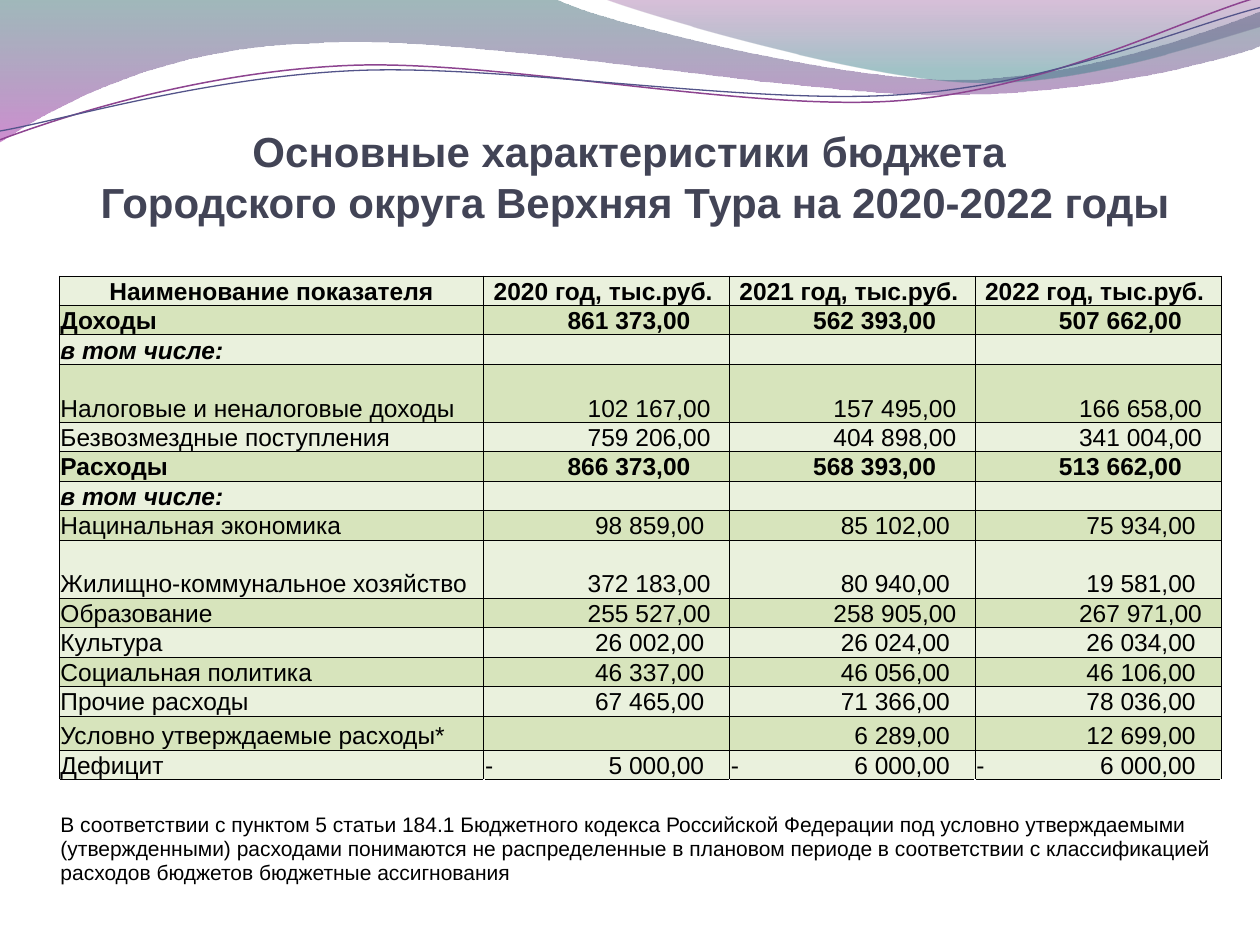
from lxml.etree import SubElement
from pptx import Presentation
from pptx.dml.color import RGBColor
from pptx.enum.text import MSO_ANCHOR, PP_ALIGN
from pptx.oxml.ns import qn
from pptx.util import Inches, Pt

COLORS = {
    "teal": "2D6368", "purple": "A530A9", "plum": "7F2F82", "sea": "2F7B82",
    "violet line": "8D4490", "indigo line": "53548A", "title": "424456",
    "text": "000000", "light row": "EAF1DD", "dark row": "D7E4BC",
}


def draw_wave(page, start, segments, closed):
    """Draw lines (one point) and Bezier curves (three points), in inches."""
    corners = [(Inches(x), Inches(y)) for segment in segments for x, y in segment]
    builder = page.shapes.build_freeform(Inches(start[0]), Inches(start[1]))
    builder.add_line_segments(corners, close=closed)
    wave = builder.convert_to_shape()
    wave.shadow.inherit = False
    # Join each three line steps of a curve into one Bezier step
    steps = iter(list(wave._element.spPr.iter(qn("a:lnTo"))))
    for segment in segments:
        group = [next(steps) for _ in segment]
        if len(group) == 3:
            curve = SubElement(group[0].getparent(), qn("a:cubicBezTo"))
            group[0].addprevious(curve)
            for step in group:
                curve.append(step[0])
                step.getparent().remove(step)
    return wave


def set_border(cell, sides):
    for side in sides:
        line = SubElement(cell._tc.get_or_add_tcPr(), qn("a:ln" + side), w=str(Pt(0.5)))
        fill = SubElement(line, qn("a:solidFill"))
        SubElement(fill, qn("a:srgbClr"), val=COLORS["text"])


deck = Presentation()
deck.slide_width, deck.slide_height = Inches(10), Inches(7.5)
page = deck.slides.add_slide(deck.slide_layouts[6])

# Translucent gradient waves: start, segments, (position, colour, opacity %)
bands = [
    ((0, 0), [
        [(4.4, -0.01)],
        [(4.76, 0.17), (6.64, 0.63), (7.58, 0.63)],
        [(8.53, 0.63), (9.58, 0.26), (10, 0.09)],
        [(10.01, 0.36)],
        [(9.83, 0.44), (8.7, 0.76), (7.46, 0.75)],
        [(6.22, 0.75), (3.82, 0.28), (2.57, 0.34)],
        [(1.29, 0.36), (0.46, 0.83), (-0.01, 1.13)],
        [(0, 0)],
    ], [(0, "teal", 45), (1, "purple", 55)]),
    ((4.79, -0.01), [
        [(5.09, 0.11), (6.82, 0.62), (7.69, 0.65)],
        [(8.56, 0.69), (9.61, 0.32), (10, 0.21)],
        [(10, 0)],
        [(4.79, -0.01)],
    ], [(0, "plum", 30), (0.8, "sea", 45)]),
]
for start, segments, stops in bands:
    band = draw_wave(page, start, segments, True)
    band.line.fill.background()
    band.fill.gradient()
    band.fill.gradient_angle = 270
    for stop, (position, color, _) in zip(band.fill.gradient_stops, stops):
        stop.position = position
        stop.color.rgb = RGBColor.from_string(COLORS[color])
    for element, (_, _, opacity) in zip(band._element.spPr.iter(qn("a:srgbClr")), stops):
        SubElement(element, qn("a:alpha"), val=str(opacity * 1000))

# Thin wavy lines
strands = [
    ("violet line", 0.85, (0, 1.11), [
        [(0.48, 0.93), (1.58, 0.57), (2.77, 0.52)],
        [(3.95, 0.47), (5.93, 0.89), (7.13, 0.8)],
        [(8.33, 0.71), (9.38, 0.15), (9.98, -0.02)]]),
    ("indigo line", 0.75, (0, 1.04), [
        [(0.47, 0.96), (1.64, 0.61), (2.83, 0.56)],
        [(4.03, 0.51), (5.97, 0.84), (7.17, 0.75)],
        [(8.36, 0.67), (9.41, 0.21), (10, 0.06)]]),
]
for color, width, start, segments in strands:
    strand = draw_wave(page, start, segments, False)
    strand.fill.background()
    strand.line.color.rgb = RGBColor.from_string(COLORS[color])
    strand.line.width = Pt(width)

# Title
title = page.shapes.add_textbox(Inches(0.5), Inches(0.86), Inches(9.08), Inches(0.94))
frame = title.text_frame
frame.word_wrap = True
frame.vertical_anchor = MSO_ANCHOR.BOTTOM
frame.margin_left = frame.margin_right = frame.margin_bottom = 0
para = frame.paragraphs[0]
para.text = "Основные характеристики бюджета \vГородского округа Верхняя Тура на 2020-2022 годы"
para.alignment = PP_ALIGN.CENTER
para.font.name, para.font.size, para.font.bold = "Arial", Pt(24), True
para.font.color.rgb = RGBColor.from_string(COLORS["title"])

# Budget table: name, values by year
years = [f"{year} год, тыс.руб. " for year in (2020, 2021, 2022)]
budget = [
    ("Наименование показателя", years),
    ("Доходы", [861373, 562393, 507662]),
    ("в том числе:", [None] * 3),
    ("Налоговые и неналоговые доходы", [102167, 157495, 166658]),
    ("Безвозмездные поступления", [759206, 404898, 341004]),
    ("Расходы", [866373, 568393, 513662]),
    ("в том числе:", [None] * 3),
    ("Нацинальная экономика", [98859, 85102, 75934]),
    ("Жилищно-коммунальное хозяйство", [372183, 80940, 19581]),
    ("Образование", [255527, 258905, 267971]),
    ("Культура", [26002, 26024, 26034]),
    ("Социальная политика", [46337, 46056, 46106]),
    ("Прочие расходы", [67465, 71366, 78036]),
    ("Условно утверждаемые расходы*", [None, 6289, 12699]),
    ("Дефицит", [-5000, -6000, -6000]),
]
footnote = (
    "В соответствии с пунктом 5 статьи 184.1 Бюджетного кодекса Российской Федерации "
    "под условно утверждаемыми (утвержденными) расходами понимаются не распределенные "
    "в плановом периоде в соответствии с классификацией расходов бюджетов бюджетные ассигнования")
rows = budget + [("", [None] * 3), (footnote, [None] * 3)]
bold_names = ("Наименование показателя", "Доходы", "в том числе:", "Расходы")
tall_rows = {3: 0.46, 8: 0.46, 13: 0.27, 16: 0.85}

holder = page.shapes.add_table(len(rows), 4, Inches(0.47), Inches(2.19), Inches(9.22), Inches(5.2))
table = holder.table
table.first_row = table.horz_banding = False
for column, width in zip(table.columns, (3.37, 1.95, 1.95, 1.95)):
    column.width = Inches(width)

for r, (name, values) in enumerate(rows):
    table.rows[r].height = Inches(tall_rows.get(r, 0.23))
    for c, value in enumerate([name] + values):
        cell = table.cell(r, c)
        cell.vertical_anchor = MSO_ANCHOR.BOTTOM
        cell.margin_left = cell.margin_right = Inches(0.01)
        cell.margin_top = cell.margin_bottom = 0
        para = cell.text_frame.paragraphs[0]
        if isinstance(value, int):
            amount = f"{abs(value):,}".replace(",", " ") + ",00"
            if value < 0:
                # Minus at the left edge, amount at a right tab
                para.text = "-\t" + amount
                tabs = SubElement(para._p.get_or_add_pPr(), qn("a:tabLst"))
                SubElement(tabs, qn("a:tab"), pos=str(Inches(1.74)), algn="r")
            else:
                para.text = amount
                para.alignment = PP_ALIGN.RIGHT
                indent = 0.31 if name in bold_names else 0.15 if value >= 100000 else 0.2
                cell.margin_right = Inches(indent)
        elif value:
            para.text = value
        else:
            para._p.get_or_add_endParaRPr().set("sz", "1400")
        if r == 0:
            para.alignment = PP_ALIGN.CENTER
        para.font.name, para.font.size = "Arial", Pt(14)
        para.font.bold = name in bold_names
        para.font.italic = name == "в том числе:"
        para.font.color.rgb = RGBColor.from_string(COLORS["text"])
        if r < len(budget):
            set_border(cell, "LRTB")
            cell.fill.solid()
            shade = "dark row" if r % 2 else "light row"
            cell.fill.fore_color.rgb = RGBColor.from_string(COLORS[shade])
        else:
            if r == len(budget):
                set_border(cell, "T")
            cell.fill.background()

# Footnote across the last row
note = table.cell(len(rows) - 1, 0)
note.merge(table.cell(len(rows) - 1, 3))
note.vertical_anchor = MSO_ANCHOR.TOP
note.margin_top = Inches(0.04)
note.text_frame.paragraphs[0].font.size = Pt(12)

deck.save("out.pptx")
